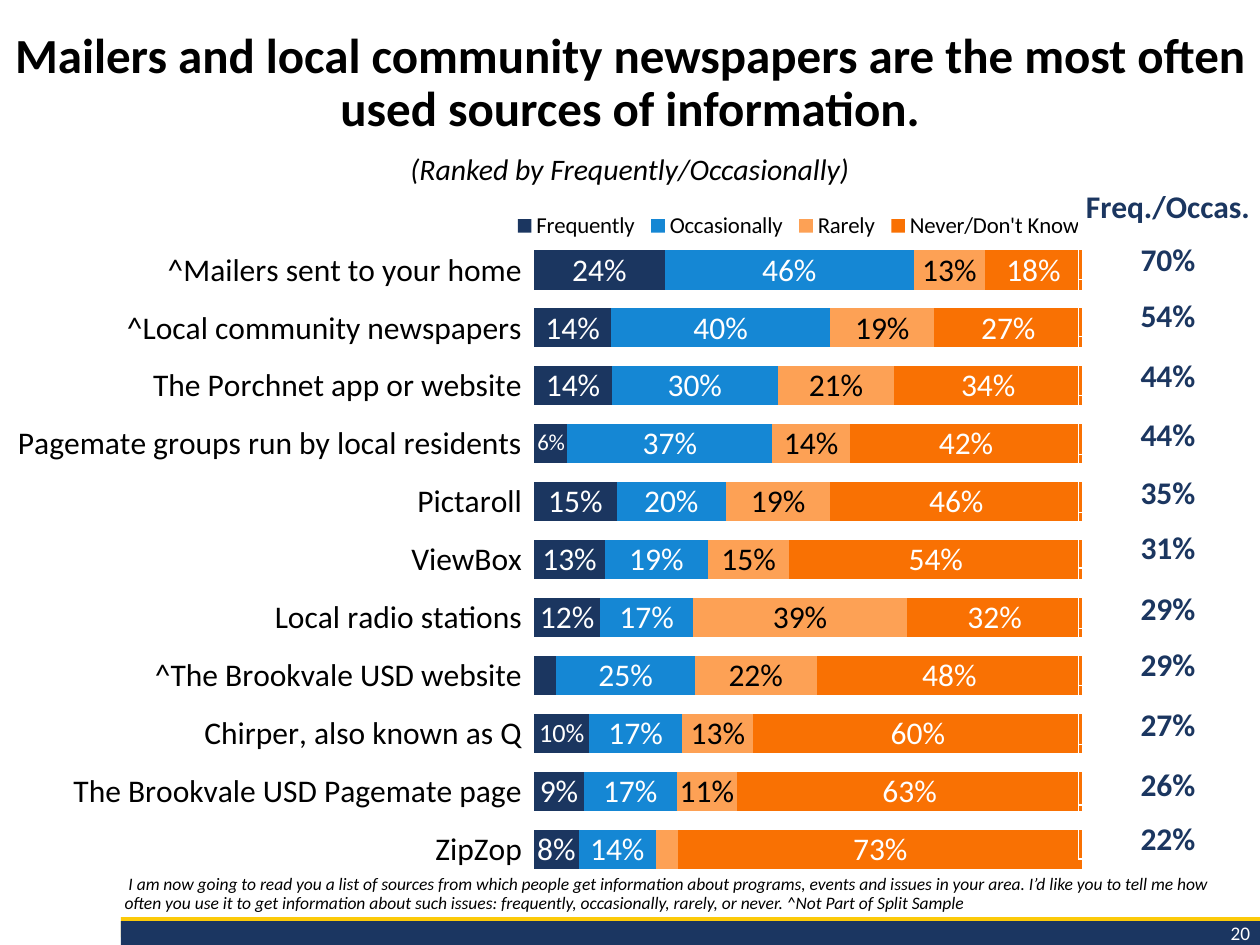
from dataclasses import dataclass

from lxml.etree import SubElement
from pptx import Presentation
from pptx.chart.data import CategoryChartData
from pptx.dml.color import RGBColor
from pptx.enum.chart import XL_CHART_TYPE as ChartType
from pptx.enum.chart import XL_LABEL_POSITION as LabelPosition
from pptx.enum.chart import XL_LEGEND_POSITION as LegendPosition
from pptx.enum.chart import XL_TICK_LABEL_POSITION as TickLabels
from pptx.enum.chart import XL_TICK_MARK as TickMark
from pptx.enum.shapes import MSO_SHAPE as Preset
from pptx.enum.text import MSO_ANCHOR as Anchor
from pptx.enum.text import PP_ALIGN as Align
from pptx.oxml import parse_xml
from pptx.oxml.ns import nsdecls, qn
from pptx.util import Inches, Pt

FONT = "Calibri"
COLORS = {
    "black": "000000",
    "white": "FFFFFF",
    "navy": "1B3660",
    "band": "1B3661",
    "gold": "FCCA09",
    "blue": "1587D4",
    "peach": "FDA155",
    "orange": "F97103",
}


@dataclass
class Answer:
    name: str
    percents: list[int]
    fill: str
    label: str
    small_labels: dict[int, int]
    hidden_labels: list[int]


SOURCES = [
    "^Mailers sent to your home",
    "^Local community newspapers",
    "The Porchnet app or website",
    "Pagemate groups run by local residents",
    "Pictaroll",
    "ViewBox",
    "Local radio stations",
    "^The Brookvale USD website",
    "Chirper, also known as Q",
    "The Brookvale USD Pagemate page",
    "ZipZop",
]
ANSWERS = [
    Answer("Frequently", [24, 14, 14, 6, 15, 13, 12, 4, 10, 9, 8],
           "navy", "white", {3: 13, 8: 15}, [7]),
    Answer("Occasionally", [46, 40, 30, 37, 20, 19, 17, 25, 17, 17, 14],
           "blue", "white", {}, []),
    Answer("Rarely", [13, 19, 21, 14, 19, 15, 39, 22, 13, 11, 4],
           "peach", "black", {}, [10]),
    Answer("Never/Don't Know", [18, 27, 34, 42, 46, 54, 32, 48, 60, 63, 73],
           "orange", "white", {}, []),
]
TOTALS = [70, 54, 44, 44, 35, 31, 29, 29, 27, 26, 22]
ROW_HEIGHTS = [0.25, 0.42, 0.45, 0.47, 0.47, 0.46, 0.44, 0.48, 0.45, 0.47, 0.48, 0.43]


def color(name: str) -> RGBColor:
    return RGBColor.from_string(COLORS[name])


def style_font(font, size: int, color_name: str, bold=False, italic=False) -> None:
    font.name, font.size, font.bold, font.italic = FONT, Pt(size), bold, italic
    font.color.rgb = color(color_name)


def write(frame, text: str, size: int, color_name: str, align=Align.LEFT,
          anchor=Anchor.TOP, spacing=None, bold=False, italic=False) -> None:
    frame.text = text
    frame.word_wrap = True
    frame.vertical_anchor = anchor
    para = frame.paragraphs[0]
    para.alignment = align
    para.line_spacing = spacing
    for span in para.runs:
        style_font(span.font, size, color_name, bold, italic)


def place(box, left: float, top: float, width: float, height: float) -> None:
    box.left, box.top = Inches(left), Inches(top)
    box.width, box.height = Inches(width), Inches(height)


def add_text(page, area: tuple, text: str, size: int, color_name: str, **style) -> None:
    box = page.shapes.add_textbox(*map(Inches, area))
    write(box.text_frame, text, size, color_name, **style)


def add_band(page, top: float, height: float, fill: str) -> None:
    band = page.shapes.add_shape(
        Preset.RECTANGLE, Inches(0.96), Inches(top), Inches(9.04), Inches(height))
    band.shadow.inherit = False
    band.fill.solid()
    band.fill.fore_color.rgb = color(fill)
    band.line.fill.background()


def set_layout(element, x: float, y: float, width: float, height: float, inner=False) -> None:
    for old in element.findall(qn("c:layout")):
        element.remove(old)
    target = '<c:layoutTarget val="inner"/>' if inner else ""
    layout = parse_xml(
        f'<c:layout {nsdecls("c")}><c:manualLayout>{target}'
        '<c:xMode val="edge"/><c:yMode val="edge"/>'
        f'<c:x val="{x}"/><c:y val="{y}"/><c:w val="{width}"/><c:h val="{height}"/>'
        '</c:manualLayout></c:layout>')
    legend_position = element.find(qn("c:legendPos"))
    if legend_position is None:
        element.insert(0, layout)
    else:
        legend_position.addnext(layout)


def hide_label(labels, index: int) -> None:
    for label in labels.findall(qn("c:dLbl")):
        if label.find(qn("c:idx")).get("val") == str(index):
            for child in list(label)[1:]:
                label.remove(child)
            SubElement(label, qn("c:delete")).set("val", "1")


def style_series(series, answer: Answer) -> None:
    series.format.fill.solid()
    series.format.fill.fore_color.rgb = color(answer.fill)
    labels = series.data_labels
    labels.show_value = True
    labels.position = LabelPosition.CENTER
    labels.number_format = "0%"
    labels.number_format_is_linked = False
    style_font(labels.font, 18, answer.label)
    for index, size in answer.small_labels.items():
        label = series.points[index].data_label
        style_font(label.font, size, answer.label)
        label.position = LabelPosition.CENTER
    for index in answer.hidden_labels:
        series.points[index].data_label.position = LabelPosition.CENTER
        hide_label(labels._element, index)


def add_answer_chart(page) -> None:
    data = CategoryChartData(number_format="0%")
    data.categories = SOURCES
    for answer in ANSWERS:
        data.add_series(answer.name, [percent / 100 for percent in answer.percents])
    chart = page.shapes.add_chart(
        ChartType.BAR_STACKED_100, Inches(0.06), Inches(1.42),
        Inches(8.84), Inches(5.73), data).chart
    style_font(chart.font, 18, "black")
    chart.has_title = False
    chart.has_legend = True
    chart.legend.position = LegendPosition.TOP
    chart.legend.include_in_layout = False
    style_font(chart.legend.font, 13, "black")
    set_layout(chart.legend._element, 0.45, 0.04, 0.52, 0.05)
    plot = chart.plots[0]
    plot.gap_width, plot.overlap, plot.vary_by_categories = 48, 100, False
    set_layout(plot._element.getparent(), 0.473, 0.086, 0.492, 0.883, inner=True)
    sources = chart.category_axis
    sources.reverse_order = True
    sources.major_tick_mark = sources.minor_tick_mark = TickMark.NONE
    sources.tick_label_position = TickLabels.LOW
    sources.format.line.fill.background()
    shares = chart.value_axis
    shares.minimum_scale, shares.maximum_scale, shares.major_unit = 0, 1, 0.2
    shares.has_major_gridlines = False
    shares.visible = False
    for series, answer in zip(plot.series, ANSWERS):
        style_series(series, answer)


def add_total_table(page) -> None:
    table = page.shapes.add_table(
        len(ROW_HEIGHTS), 1, Inches(8.56), Inches(1.55),
        Inches(1.42), Inches(sum(ROW_HEIGHTS))).table
    table.first_row = table.horz_banding = False
    texts = ["Freq./Occas."] + [f"{total}%" for total in TOTALS]
    for index, (text, height) in enumerate(zip(texts, ROW_HEIGHTS)):
        table.rows[index].height = Inches(height)
        cell = table.cell(index, 0)
        cell.fill.background()
        cell.margin_left = cell.margin_right = Inches(0.01)
        cell.margin_top = cell.margin_bottom = 0
        write(cell.text_frame, text, 18, "navy", Align.CENTER, bold=True,
              spacing=Pt(17) if index == 0 else None)
        cell.vertical_anchor = Anchor.BOTTOM


def main() -> None:
    deck = Presentation()
    deck.slide_width, deck.slide_height = Inches(10), Inches(7.5)
    page = deck.slides.add_slide(deck.slide_layouts[5])
    add_band(page, 7.28, 0.16, "gold")
    add_band(page, 7.31, 0.19, "band")
    add_text(page, (8.54, 7.26, 1.48, 0.29), "20", 11, "white", align=Align.RIGHT)
    title = page.shapes.title
    place(title, 0, 0.2, 10, 1.22)
    write(title.text_frame,
          "Mailers and local community newspapers are the most often used sources of information.",
          28, "black", Align.CENTER, spacing=0.9, bold=True)
    add_text(page, (0.89, 6.76, 9.09, 0.54),
             " I am now going to read you a list of sources from which people get information "
             "about programs, events and issues in your area. I’d like you to tell me how often "
             "you use it to get information about such issues: frequently, occasionally, rarely, "
             "or never. ^Not Part of Split Sample",
             10, "black", anchor=Anchor.BOTTOM, spacing=0.9, italic=True)
    add_answer_chart(page)
    add_total_table(page)
    add_text(page, (0, 1.15, 10, 0.39), "(Ranked by Frequently/Occasionally)",
             17, "black", align=Align.CENTER, italic=True)
    deck.save("out.pptx")


if __name__ == "__main__":
    main()
